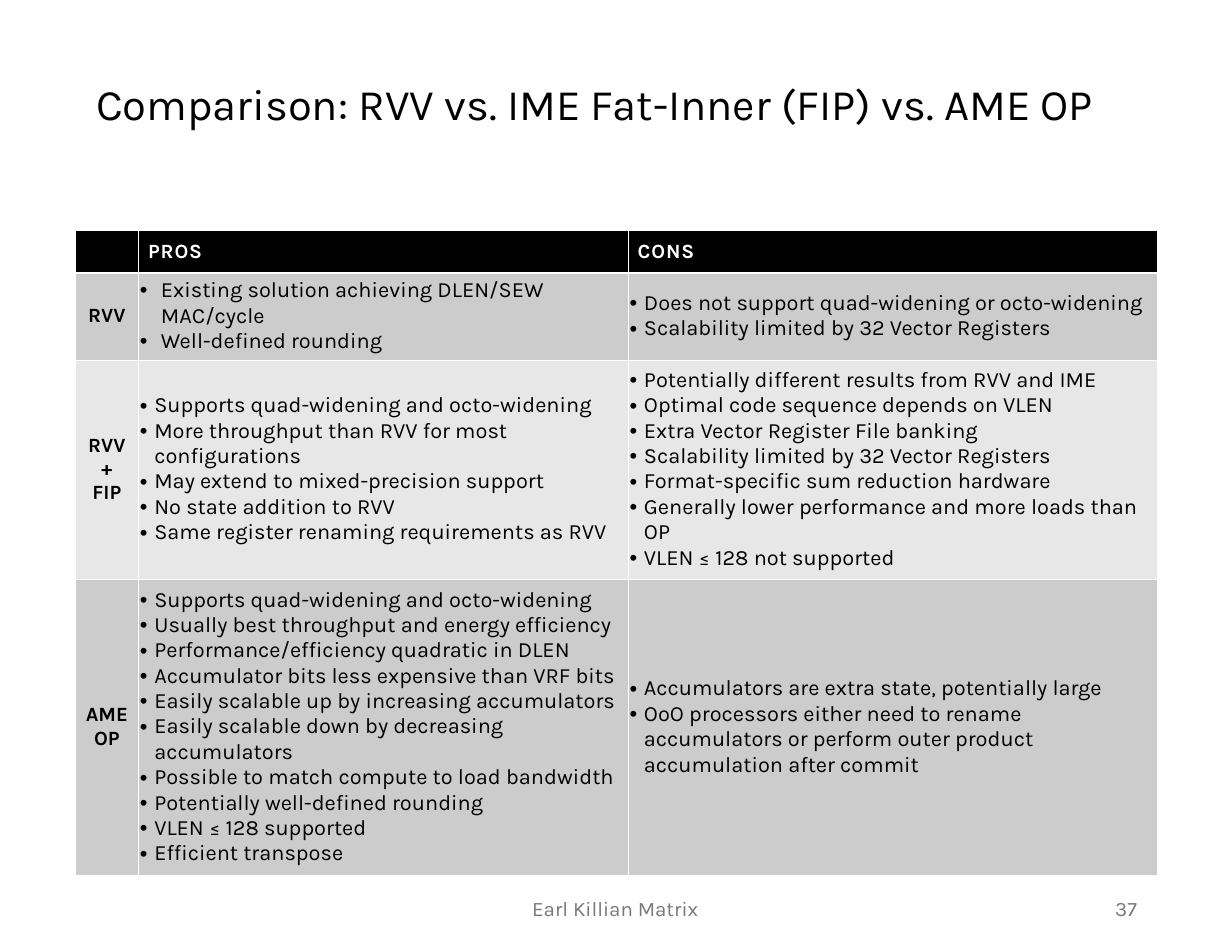
from lxml.etree import SubElement
from pptx import Presentation
from pptx.dml.color import RGBColor
from pptx.enum.text import MSO_ANCHOR, PP_ALIGN
from pptx.oxml.ns import qn
from pptx.util import Pt

BLACK = RGBColor(0x00, 0x00, 0x00)
WHITE = RGBColor(0xFF, 0xFF, 0xFF)
FOOTER_GRAY = RGBColor(0x79, 0x79, 0x79)
DARK_BAND = RGBColor(0xCC, 0xCC, 0xCC)
LIGHT_BAND = RGBColor(0xE7, 0xE7, 0xE7)

HEADERS = ["", "PROS", "CONS"]
COMPARISON = [
    ("RVV",
     ["Existing solution achieving DLEN/SEW MAC/cycle",
      "Well-defined rounding"],
     ["Does not support quad-widening or octo-widening",
      "Scalability limited by 32 Vector Registers"]),
    ("RVV\n+\nFIP",
     ["Supports quad-widening and octo-widening",
      "More throughput than RVV for most configurations",
      "May extend to mixed-precision support",
      "No state addition to RVV",
      "Same register renaming requirements as RVV"],
     ["Potentially different results from RVV and IME",
      "Optimal code sequence depends on VLEN",
      "Extra Vector Register File banking",
      "Scalability limited by 32 Vector Registers",
      "Format-specific sum reduction hardware",
      "Generally lower performance and more loads than OP",
      "VLEN ≤ 128 not supported"]),
    ("AME\nOP",
     ["Supports quad-widening and octo-widening",
      "Usually best throughput and energy efficiency",
      "Performance/efficiency quadratic in DLEN",
      "Accumulator bits less expensive than VRF bits",
      "Easily scalable up by increasing accumulators",
      "Easily scalable down by decreasing accumulators",
      "Possible to match compute to load bandwidth",
      "Potentially well-defined rounding",
      "VLEN ≤ 128 supported",
      "Efficient transpose"],
     ["Accumulators are extra state, potentially large",
      "OoO processors either need to rename accumulators or perform "
      "outer product accumulation after commit"]),
]


def write(paragraph, text, size, color, bold=False, align=PP_ALIGN.LEFT):
    paragraph.text = text
    paragraph.alignment = align
    font = paragraph.font
    font.name, font.size, font.bold = "Karla", Pt(size), bold
    font.color.rgb = color


def style_cell(cell, fill, margins):
    cell.vertical_anchor = MSO_ANCHOR.MIDDLE
    left, top, right, bottom = margins
    cell.margin_left, cell.margin_top = Pt(left), Pt(top)
    cell.margin_right, cell.margin_bottom = Pt(right), Pt(bottom)
    properties = cell._tc.get_or_add_tcPr()
    for side in ("a:lnL", "a:lnR", "a:lnT", "a:lnB"):
        line = SubElement(properties, qn(side), w=str(Pt(1)))
        solid = SubElement(line, qn("a:solidFill"))
        SubElement(solid, qn("a:srgbClr"), val=str(WHITE))
    cell.fill.solid()
    cell.fill.fore_color.rgb = fill


presentation = Presentation()
presentation.slide_width, presentation.slide_height = Pt(792), Pt(612)
slide = presentation.slides.add_slide(presentation.slide_layouts[6])

# Title, footer and page number
for text, box, size, color, align, spacing in [
    ("Comparison: RVV vs. IME Fat-Inner (FIP) vs. AME OP",
     (54.7, 32.4, 684, 72), 28, BLACK, PP_ALIGN.LEFT, 0.9),
    ("Earl Killian Matrix", (262, 567.4, 267, 32.4), 13.2, FOOTER_GRAY, PP_ALIGN.CENTER, 1.0),
    ("37", (559.4, 567.4, 178.6, 32.4), 13.2, FOOTER_GRAY, PP_ALIGN.RIGHT, 1.0),
]:
    frame = slide.shapes.add_textbox(*map(Pt, box)).text_frame
    frame.word_wrap = True
    frame.vertical_anchor = MSO_ANCHOR.MIDDLE
    write(frame.paragraphs[0], text, size, color, align=align)
    frame.paragraphs[0].line_spacing = spacing

# Table grid
column_widths = [41, 314.8, 340.4]
row_heights = [27.2, 37.4, 116.6, 164.2]
table = slide.shapes.add_table(
    len(row_heights), len(column_widths), Pt(48.2), Pt(147.8),
    Pt(sum(column_widths)), Pt(sum(row_heights))).table
table.first_row = table.horz_banding = False
for column, width in zip(table.columns, column_widths):
    column.width = Pt(width)
for row, height in zip(table.rows, row_heights):
    row.height = Pt(height)

# Header row
for cell, text in zip(table.rows[0].cells, HEADERS):
    style_cell(cell, BLACK, (6, 6, 6, 6) if text else (6, 3, 6, 3))
    paragraph = cell.text_frame.paragraphs[0]
    write(paragraph, text, 13, WHITE, bold=True)
    for run in paragraph.runs:
        run._r.get_or_add_rPr().set("spc", "60")

# Body rows: centred label, then bulleted pros and cons
for row_index, (label, pros, cons) in enumerate(COMPARISON, start=1):
    cells = table.rows[row_index].cells
    for cell in cells:
        style_cell(cell, DARK_BAND if row_index % 2 else LIGHT_BAND, (0.8, 2.4, 0.8, 3.6))
    write(cells[0].text_frame.paragraphs[0], label, 13, BLACK, True, PP_ALIGN.CENTER)
    for column_index, points in enumerate((pros, cons), start=1):
        frame = cells[column_index].text_frame
        indent = Pt(13.5 if (row_index, column_index) == (1, 1) else 9.2)
        for index, point in enumerate(points):
            paragraph = frame.add_paragraph() if index else frame.paragraphs[0]
            write(paragraph, point, 14, BLACK)
            properties = paragraph._p.get_or_add_pPr()
            properties.set("marL", str(indent))
            properties.set("indent", str(-indent))
            bullet_font = properties.makeelement(qn("a:buFont"), {"typeface": "Arial"})
            bullet = properties.makeelement(qn("a:buChar"), {"char": "•"})
            properties.insert(0, bullet_font)
            properties.insert(1, bullet)

presentation.save("out.pptx")
